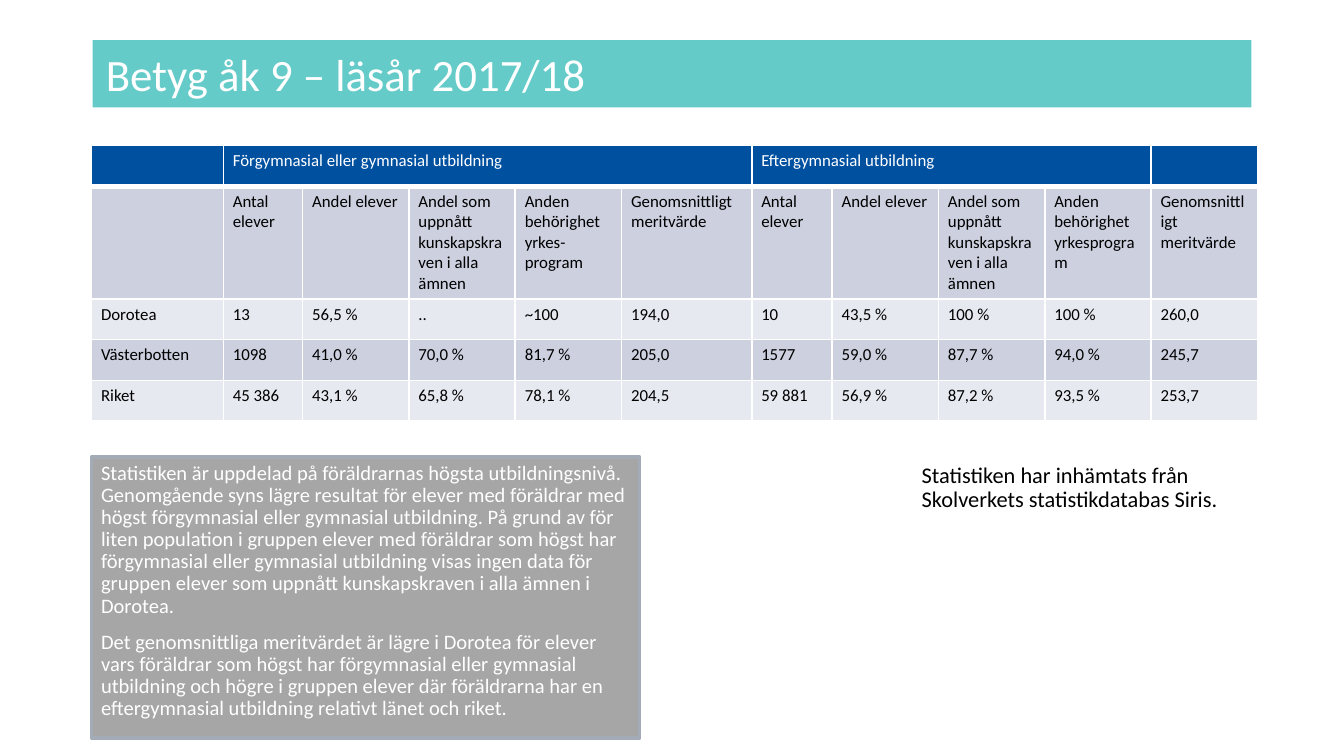
"""Build a slide with a table of year 9 grades by parents' level of education."""
from typing import NamedTuple, Optional

from lxml.etree import SubElement
from pptx import Presentation
from pptx.dml.color import RGBColor
from pptx.enum.shapes import MSO_SHAPE as SHAPE
from pptx.enum.text import MSO_ANCHOR as ANCHOR, PP_ALIGN as ALIGN
from pptx.oxml.ns import qn
from pptx.util import Cm, Pt

FONT = "Calibri"
WHITE, BLACK = "FFFFFF", "000000"
TEAL, BLUE, GREY, EDGE = "64CBC9", "0050A0", "A6A6A6", "A3ABB6"
BANDS = ("CCD0DF", "E7E9F0")


class Panel(NamedTuple):
    box: tuple[float, float, float, float]
    paragraphs: list[str]
    size: float
    color: str = WHITE
    fill: Optional[str] = None
    line: Optional[str] = None
    anchor: ANCHOR = ANCHOR.TOP
    inset: tuple[float, float] = (0.25, 0.13)
    spacing: float = 1.0
    gap: float = 0


PANELS = [
    Panel((1.75, 0.76, 21.9, 1.27), ["Betyg åk 9 – läsår 2017/18"], 24,
          fill=TEAL, anchor=ANCHOR.MIDDLE),
    Panel((17.17, 8.64, 6.58, 2.77),
          ["Statistiken har inhämtats från Skolverkets statistikdatabas Siris."],
          12, color=BLACK, spacing=0.9),
    Panel((1.73, 8.64, 10.36, 5.31), [
        "Statistiken är uppdelad på föräldrarnas högsta utbildningsnivå. "
        "Genomgående syns lägre resultat för elever med föräldrar med högst "
        "förgymnasial eller gymnasial utbildning. På grund av för liten "
        "population i gruppen elever med föräldrar som högst har förgymnasial "
        "eller gymnasial utbildning visas ingen data för gruppen elever som "
        "uppnått kunskapskraven i alla ämnen i Dorotea.",
        "Det genomsnittliga meritvärdet är lägre i Dorotea för elever vars "
        "föräldrar som högst har förgymnasial eller gymnasial utbildning och "
        "högre i gruppen elever där föräldrarna har en eftergymnasial "
        "utbildning relativt länet och riket.",
    ], 11, fill=GREY, line=EDGE, inset=(0.18, 0.1), spacing=0.9, gap=7.5),
]

GROUPS = [(1, 5, "Förgymnasial eller gymnasial utbildning"),
          (6, 9, "Eftergymnasial utbildning")]
REQUIREMENTS = "Andel som uppnått kunskapskraven i alla ämnen"
MERIT = "Genomsnittligt meritvärde"
ROWS = [
    ["", "Antal elever", "Andel elever", REQUIREMENTS,
     "Anden behörighet yrkes-program", MERIT,
     "Antal elever", "Andel elever", REQUIREMENTS,
     "Anden behörighet yrkesprogram", MERIT],
    ["Dorotea", "13", "56,5 %", "..", "~100", "194,0",
     "10", "43,5 %", "100 %", "100 %", "260,0"],
    ["Västerbotten", "1098", "41,0 %", "70,0 %", "81,7 %", "205,0",
     "1577", "59,0 %", "87,7 %", "94,0 %", "245,7"],
    ["Riket", "45 386", "43,1 %", "65,8 %", "78,1 %", "204,5",
     "59 881", "56,9 %", "87,2 %", "93,5 %", "253,7"],
]
COLUMN_WIDTHS = [2.49, 1.5, 2.01, 2.01, 2.01, 2.46, 1.52] + [2.01] * 4
ROW_HEIGHTS = [0.77, 2.1, 0.77, 0.77, 0.77]


def rgb(value: str) -> RGBColor:
    return RGBColor.from_string(value)


def write(p, text: str, *, size: float, color: str, spacing: float = 1.0,
          before: float = 0) -> None:
    p.alignment = ALIGN.LEFT
    p.line_spacing = spacing
    p.space_before = Pt(before)
    if not text:
        SubElement(p._p, qn("a:endParaRPr"), sz=str(int(size * 100)))
        return
    r = p.add_run()
    r.text = text
    r.font.name, r.font.size, r.font.bold = FONT, Pt(size), False
    r.font.color.rgb = rgb(color)


def draw_panel(s, panel: Panel) -> None:
    box = [Cm(v) for v in panel.box]
    if panel.fill:
        sp = s.shapes.add_shape(SHAPE.RECTANGLE, *box)
        sp.shadow.inherit = False
        sp.fill.solid()
        sp.fill.fore_color.rgb = rgb(panel.fill)
        if panel.line:
            sp.line.color.rgb = rgb(panel.line)
            sp.line.width = Pt(2)
        else:
            sp.line.fill.background()
    else:
        sp = s.shapes.add_textbox(*box)
    tf = sp.text_frame
    tf.word_wrap = True
    tf.vertical_anchor = panel.anchor
    tf.margin_left = tf.margin_right = Cm(panel.inset[0])
    tf.margin_top = tf.margin_bottom = Cm(panel.inset[1])
    for i, text in enumerate(panel.paragraphs):
        write(tf.add_paragraph() if i else tf.paragraphs[0], text,
              size=panel.size, color=panel.color, spacing=panel.spacing,
              before=panel.gap if i else 0)


def add_borders(cell, bottom: float) -> None:
    tcPr = cell._tc.get_or_add_tcPr()
    for i, (side, width) in enumerate(
            [("L", 1), ("R", 1), ("T", 1), ("B", bottom)]):
        ln = SubElement(tcPr, qn(f"a:ln{side}"), w=str(Pt(width)))
        SubElement(SubElement(ln, qn("a:solidFill")), qn("a:srgbClr"), val=WHITE)
        tcPr.insert(i, ln)


def draw_cell(cell, text: str, *, fill: str, color: str, bottom: float) -> None:
    cell.margin_left = cell.margin_right = Cm(0.18)
    cell.margin_top = cell.margin_bottom = Cm(0.1)
    cell.fill.solid()
    cell.fill.fore_color.rgb = rgb(fill)
    add_borders(cell, bottom)
    write(cell.text_frame.paragraphs[0], text, size=9, color=color)


def draw_table(s) -> None:
    table = s.shapes.add_table(
        len(ROW_HEIGHTS), len(COLUMN_WIDTHS), Cm(1.73), Cm(2.75),
        Cm(sum(COLUMN_WIDTHS)), Cm(sum(ROW_HEIGHTS))).table
    for column, width in zip(table.columns, COLUMN_WIDTHS):
        column.width = Cm(width)
    for row, height in zip(table.rows, ROW_HEIGHTS):
        row.height = Cm(height)
    titles = {first: text for first, _, text in GROUPS}
    for c in range(len(COLUMN_WIDTHS)):
        draw_cell(table.cell(0, c), titles.get(c, ""), fill=BLUE, color=WHITE,
                  bottom=3)
    for i, values in enumerate(ROWS):
        for c, text in enumerate(values):
            draw_cell(table.cell(i + 1, c), text, fill=BANDS[i % 2],
                      color=BLACK, bottom=1)
    for first, last, _ in GROUPS:
        table.cell(0, first).merge(table.cell(0, last))


def main() -> None:
    prs = Presentation()
    prs.slide_width, prs.slide_height = Cm(25.4), Cm(14.29)
    s = prs.slides.add_slide(prs.slide_layouts[6])
    title, *notes = PANELS
    draw_panel(s, title)
    draw_table(s)
    for panel in notes:
        draw_panel(s, panel)
    prs.save("out.pptx")


if __name__ == "__main__":
    main()
